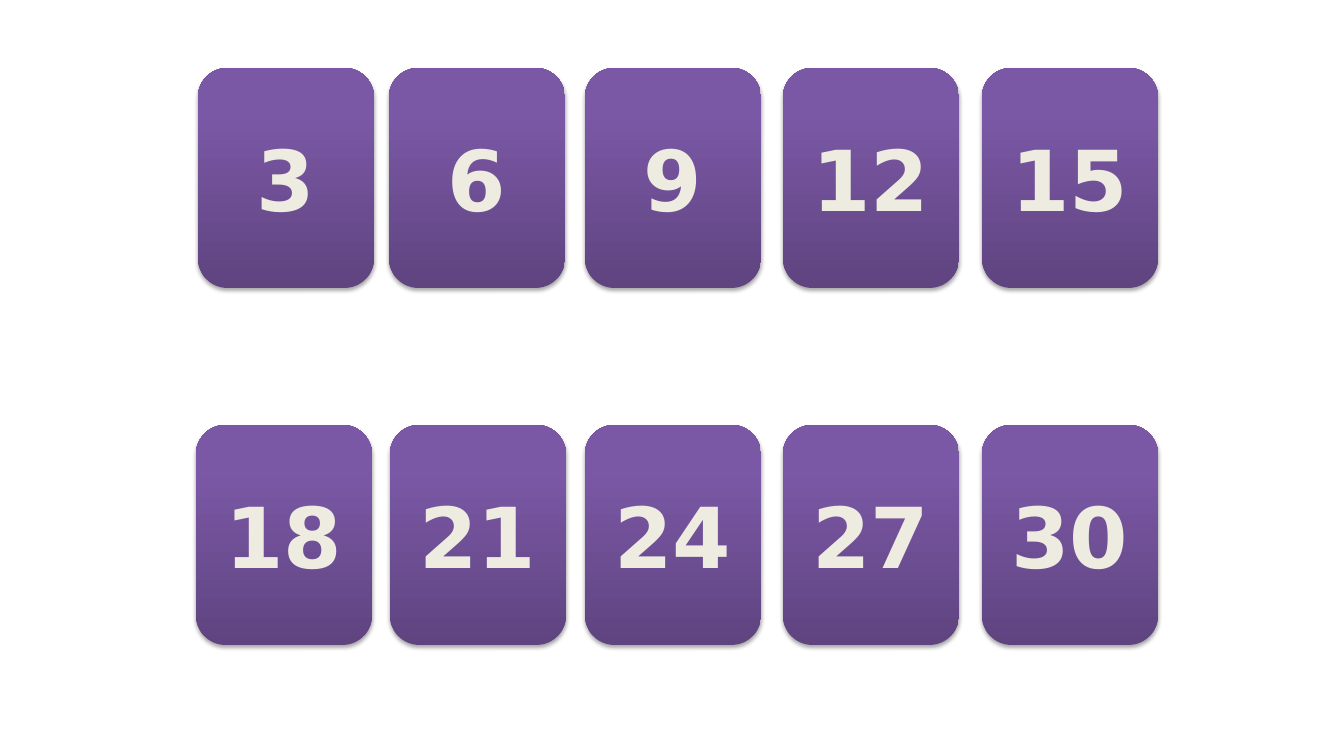
from copy import deepcopy
from lxml import etree
from pptx import Presentation
from pptx.dml.color import RGBColor
from pptx.enum.shapes import MSO_SHAPE
from pptx.enum.text import MSO_ANCHOR, PP_ALIGN
from pptx.oxml.ns import qn
from pptx.util import Pt

PX = 914400 / 100.8
STOPS = [(0, "5F4480"), (0.8, "7B58A6"), (1, "7C57A8")]


def px(n):
    return round(n * PX)


def write(shape, text, size, color, font="DejaVu Sans", bold=True):
    tf = shape.text_frame
    tf.word_wrap = True
    tf.vertical_anchor = MSO_ANCHOR.MIDDLE
    p = tf.paragraphs[0]
    p.alignment = PP_ALIGN.CENTER
    r = p.add_run()
    r.text = text
    r.font.name, r.font.size, r.font.bold = font, Pt(size), bold
    r.font.color.rgb = RGBColor.from_string(color)


prs = Presentation()
prs.slide_width, prs.slide_height = px(1344), px(756)
s = prs.slides.add_slide(prs.slide_layouts[6])

# Two rows of five cards counting in threes
CARD_W, CARD_H = 176, 220
ROWS = [(68, [198, 389, 585, 783, 982]),
        (425, [196, 390, 585, 783, 982])]
number = 0
for top, lefts in ROWS:
    for left in lefts:
        number += 3
        card = s.shapes.add_shape(MSO_SHAPE.ROUNDED_RECTANGLE,
                                  px(left), px(top), px(CARD_W), px(CARD_H))
        card.line.fill.background()

        # Purple gradient, dark at the bottom
        card.fill.gradient()
        card.fill.gradient_angle = 90
        gs_list = card._element.spPr.find(".//" + qn("a:gsLst"))
        gs_list.append(deepcopy(gs_list[-1]))
        for stop, (position, color) in zip(card.fill.gradient_stops, STOPS):
            stop.position = position
            stop.color.rgb = RGBColor.from_string(color)

        # Soft shadow below
        card.shadow.inherit = False
        effects = card._element.spPr.find(qn("a:effectLst"))
        shadow = etree.SubElement(effects, qn("a:outerShdw"), blurRad="40000",
                                  dist="23000", dir="5400000", rotWithShape="0")
        black = etree.SubElement(shadow, qn("a:srgbClr"), val="000000")
        etree.SubElement(black, qn("a:alpha"), val="35000")

        write(card, str(number), size=60, color="EEECE1")

prs.save("out.pptx")
